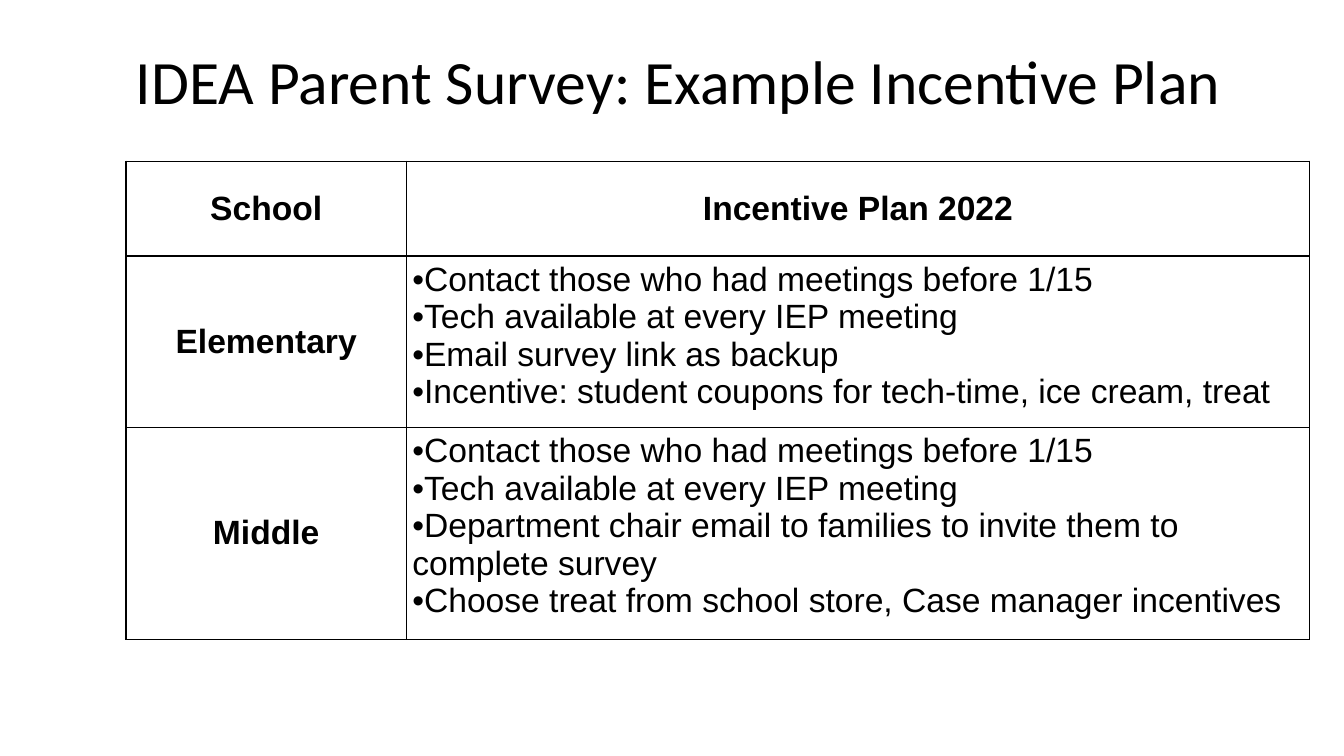
"""Build the parent survey incentive plan slide."""
from lxml import etree
from pptx import Presentation
from pptx.dml.color import RGBColor
from pptx.enum.text import MSO_ANCHOR, PP_ALIGN
from pptx.oxml.ns import qn
from pptx.util import Inches, Pt

MIDDLE, TOP = MSO_ANCHOR.MIDDLE, MSO_ANCHOR.TOP
LEFT, CENTER = PP_ALIGN.LEFT, PP_ALIGN.CENTER

TITLE = "IDEA Parent Survey: Example Incentive Plan"
HEADS = ("School", "Incentive Plan 2022")
SHARED = ["Contact those who had meetings before 1/15",
          "Tech available at every IEP meeting"]
PLANS = [
    ("Elementary", SHARED + [
        "Email survey link as backup",
        "Incentive: student coupons for tech-time, ice cream, treat"]),
    ("Middle", SHARED + [
        "Department chair email to families to invite them to complete survey",
        "Choose treat from school store, Case manager incentives"]),
]
THEME = {"ink": "000000", "head": ("Calibri", 44), "body": ("Arial", 24), "line": 1}
COLS = (2.78, 8.96)
ROWS = (0.94, 0.86, 0.86)


def add_run(para, text, style, bold=False):
    run = para.add_run()
    run.text = text
    font = run.font
    font.name, size = THEME[style]
    font.size, font.bold = Pt(size), bold
    font.color.rgb = RGBColor.from_string(THEME["ink"])


def add_title(slide):
    box = slide.shapes.add_textbox(Inches(1.25), Inches(0.11), Inches(11.16), Inches(1.45))
    frame = box.text_frame
    frame.word_wrap = True
    frame.vertical_anchor = MIDDLE
    para = frame.paragraphs[0]
    para.line_spacing = 0.9
    add_run(para, TITLE, "head")


def add_edges(cell):
    props = cell._tc.get_or_add_tcPr()
    for side in ("lnL", "lnR", "lnT", "lnB"):
        line = etree.SubElement(props, qn("a:" + side), w=str(Pt(THEME["line"])))
        fill = etree.SubElement(line, qn("a:solidFill"))
        etree.SubElement(fill, qn("a:srgbClr"), val=THEME["ink"])


def add_bullet(para):
    props = para._p.get_or_add_pPr()
    props.set("marL", "0")
    props.set("indent", "0")
    etree.SubElement(props, qn("a:buFont"), typeface="Arial")
    etree.SubElement(props, qn("a:buChar"), char="•")


def fill_cell(cell, lines, label):
    cell.margin_left = cell.margin_right = Inches(0.06)
    cell.margin_top = cell.margin_bottom = Inches(0.05)
    cell.vertical_anchor = MIDDLE if label else TOP
    add_edges(cell)
    cell.fill.background()
    frame = cell.text_frame
    for i, text in enumerate(lines):
        para = frame.add_paragraph() if i else frame.paragraphs[0]
        para.alignment = CENTER if label else LEFT
        if not label:
            if i == len(lines) - 1:
                para.space_after = Pt(8)
            add_bullet(para)
        add_run(para, text, "body", label)


def add_plan(slide):
    shape = slide.shapes.add_table(len(ROWS), len(COLS), Inches(1.25), Inches(1.6),
                                   Inches(sum(COLS)), Inches(sum(ROWS)))
    table = shape.table
    table.first_row = table.horz_banding = False
    for col, width in zip(table.columns, COLS):
        col.width = Inches(width)
    for row, height in zip(table.rows, ROWS):
        row.height = Inches(height)
    for c, head in enumerate(HEADS):
        fill_cell(table.cell(0, c), [head], True)
    for r, (school, steps) in enumerate(PLANS, 1):
        fill_cell(table.cell(r, 0), [school], True)
        fill_cell(table.cell(r, 1), steps, False)
    shape.height = Inches(4.74)


def main():
    deck = Presentation()
    deck.slide_width, deck.slide_height = Inches(13.33), Inches(7.5)
    slide = deck.slides.add_slide(deck.slide_layouts[6])
    add_title(slide)
    add_plan(slide)
    deck.save("out.pptx")


if __name__ == "__main__":
    main()
